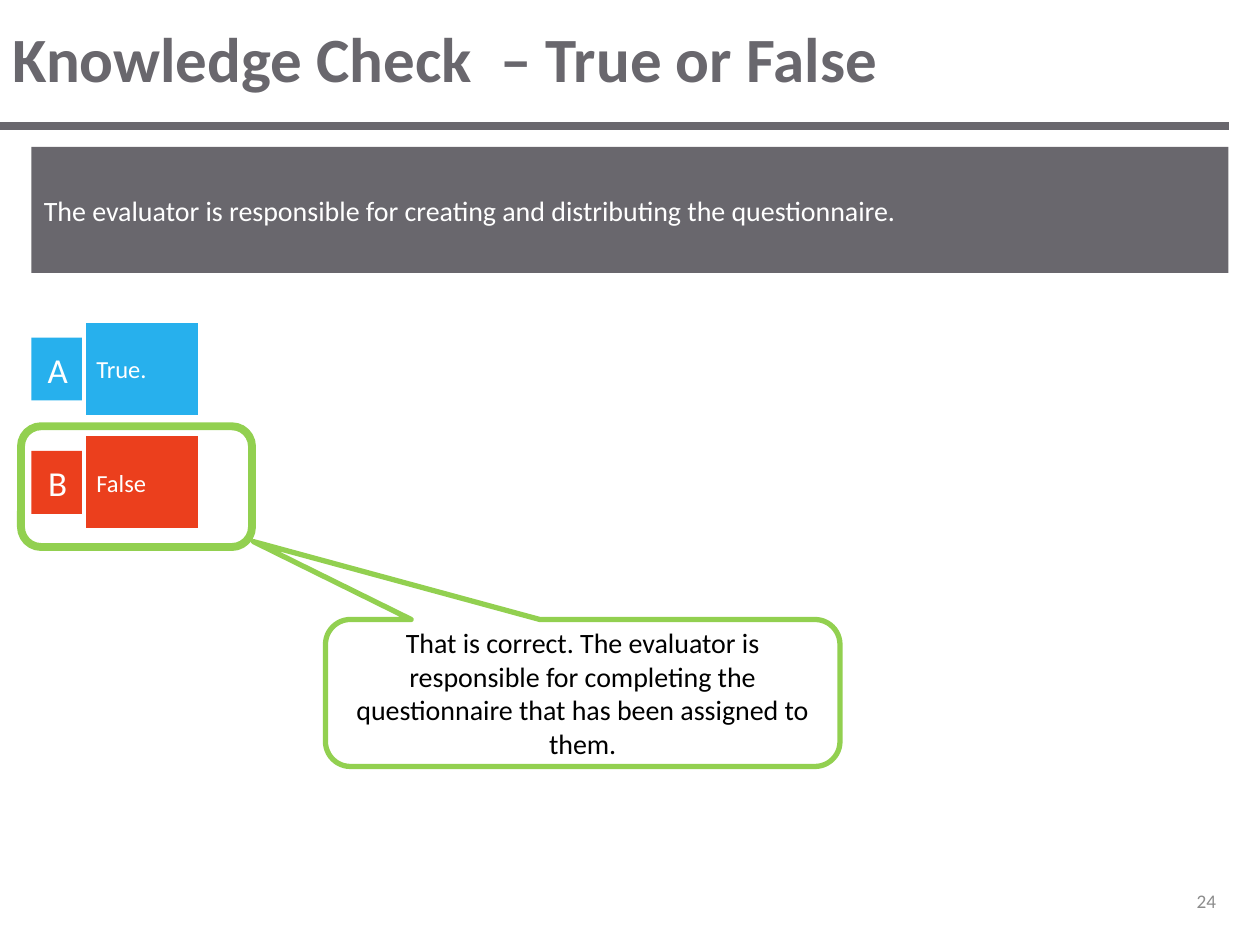
import pptx
import pptx.util
import pptx.dml.color
import pptx.enum.shapes
import pptx.enum.text
import pptx.oxml

Pt = pptx.util.Pt
Kind = pptx.enum.shapes.MSO_SHAPE
Align = pptx.enum.text.PP_ALIGN
COLS, ROWS = 120, 90
WIDE, HIGH = pptx.util.Inches(10), pptx.util.Inches(7.5)
HUES = {"gray": "69676D", "blue": "27B0ED", "red": "EB3F1D",
        "green": "92D050", "white": "FFFFFF", "black": "000000",
        "pale": "8C8C8C"}


def tint(name):
    return pptx.dml.color.RGBColor.from_string(HUES[name])


def scale(box):
    x, y, w, h = box
    return [round(n) for n in (x * WIDE / COLS, y * HIGH / ROWS,
                               w * WIDE / COLS, h * HIGH / ROWS)]


def write(shape, text, size, hue, align=Align.LEFT, bold=False, gap=0):
    frame = shape.text_frame
    frame.word_wrap = True
    frame.vertical_anchor = pptx.enum.text.MSO_ANCHOR.MIDDLE
    para = frame.paragraphs[0]
    para.text = text
    para.alignment = align
    para.space_before = para.space_after = Pt(gap)
    para.font.name = "Calibri"
    para.font.size = Pt(size)
    para.font.bold = bold
    para.font.color.rgb = tint(hue)


def label(slide, box, *args, **opts):
    write(slide.shapes.add_textbox(*scale(box)), *args, **opts)


def block(slide, box, fill=None, line=None, width=0, kind=Kind.RECTANGLE):
    shape = slide.shapes.add_shape(kind, *scale(box))
    shape.shadow.inherit = False
    if fill:
        shape.fill.solid()
        shape.fill.fore_color.rgb = tint(fill)
    else:
        shape.fill.background()
    if line:
        shape.line.color.rgb = tint(line)
        shape.line.width = Pt(width)
    else:
        shape.line.fill.background()
    return shape


def header(slide, box):
    x, y, w, h = box
    left, top, right, _ = scale((x, y + h, w - 3, 0))
    rule = slide.shapes.add_connector(
        pptx.enum.shapes.MSO_CONNECTOR.STRAIGHT, left, top, left + right, top)
    rule.line.color.rgb = tint("gray")
    rule.line.width = Pt(5)
    rule._element.spPr.append(pptx.oxml.parse_xml(
        '<a:effectLst xmlns:a='
        '"http://schemas.openxmlformats.org/drawingml/2006/main"/>'))
    label(slide, (x, y, w, h - 1), "Knowledge Check  – True or False",
          36, "gray", bold=True)


def question(slide, box):
    write(block(slide, box, "gray"),
          "The evaluator is responsible for creating and distributing "
          "the questionnaire.", 16, "white", gap=6)


def choice(slide, box, mark, text, hue):
    x, y, w, h = box
    badge = block(slide, (x, y + (h - 6) / 2, 5, 6), hue)
    write(badge, mark, 20, "white", Align.CENTER, gap=6)
    write(block(slide, (x + 5, y, w - 5, h), hue, "white", 2),
          text, 14, "white")


def answer(slide, box):
    bubble = block(slide, box, "white", "green", 3,
                   Kind.ROUNDED_RECTANGULAR_CALLOUT)
    bubble.adjustments[0] = -0.64
    bubble.adjustments[1] = -1.03
    bubble.adjustments[2] = 0.17
    write(bubble, "That is correct. The evaluator is responsible for "
          "completing the questionnaire that has been assigned to them.",
          16, "black", Align.CENTER)


def main():
    deck = pptx.Presentation()
    deck.slide_width, deck.slide_height = WIDE, HIGH
    slide = deck.slides.add_slide(deck.slide_layouts[6])
    header(slide, (0, 0, COLS, 12))
    label(slide, (97, 83.4, 20, 4.8), "24", 11, "pale", Align.RIGHT)
    question(slide, (3, 14, 114, 12))
    picks = [("A", "True.", "blue"), ("B", "False", "red")]
    for row, pick in enumerate(picks):
        choice(slide, (3, 30.6 + row * 10.8, 16, 9.1), *pick)
    answer(slide, (31, 59, 49, 14))
    block(slide, (2, 40.6, 22, 11.5), line="green", width=4.5,
          kind=Kind.ROUNDED_RECTANGLE)
    deck.save("out.pptx")


if __name__ == "__main__":
    main()
